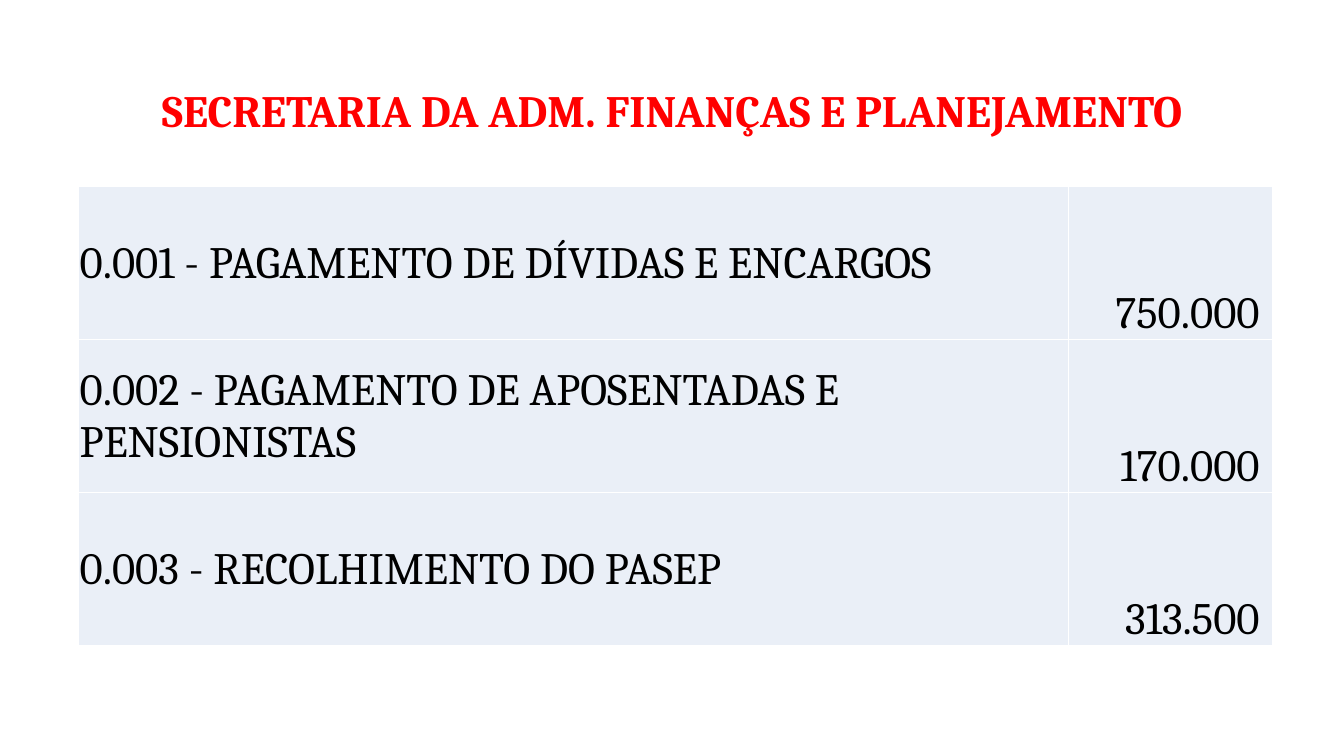
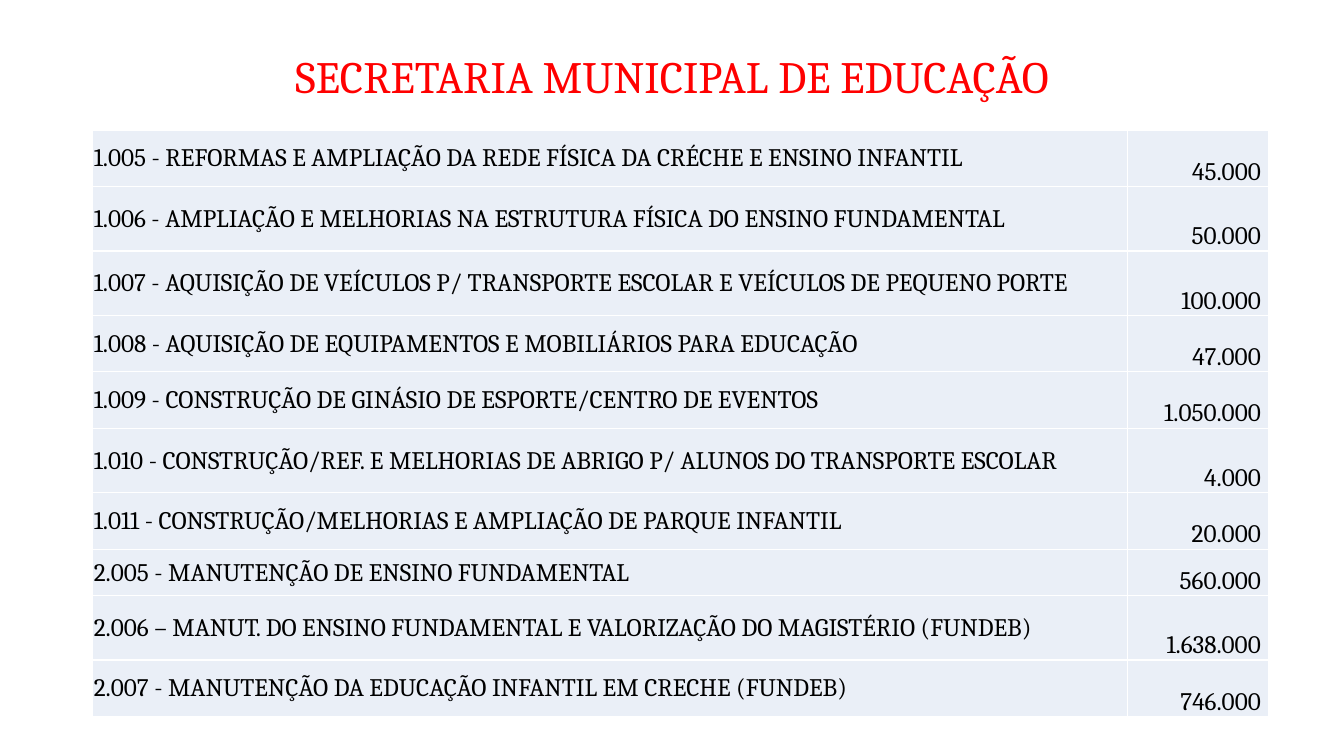
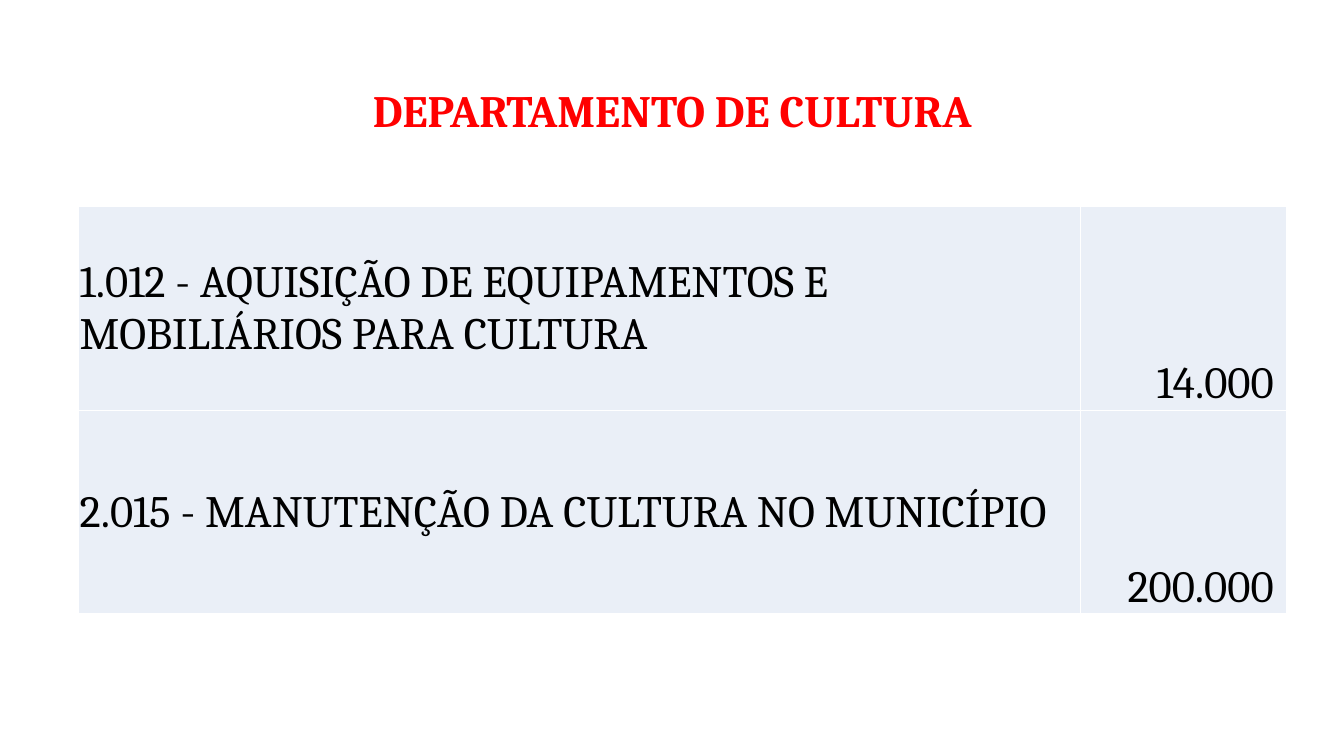
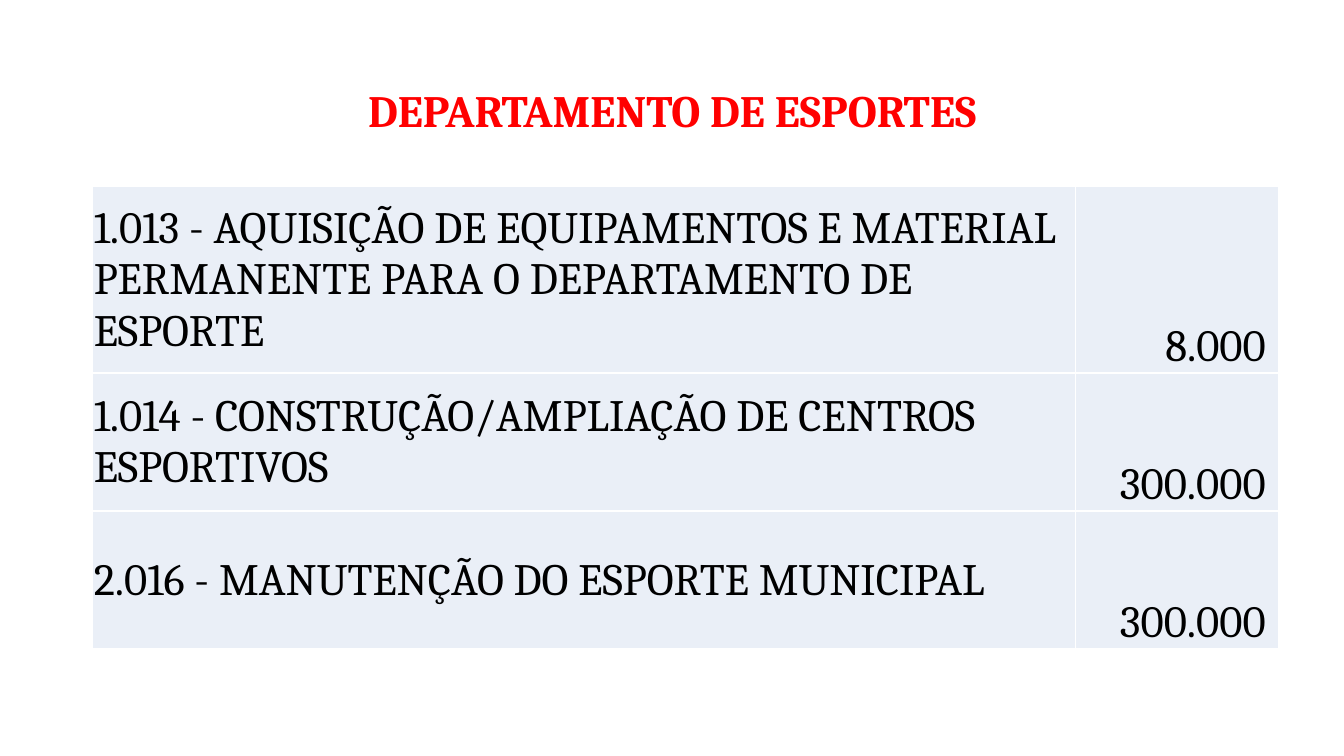
import pptx
import pptx.dml.color
import pptx.enum.text
import pptx.oxml
import pptx.oxml.ns
import pptx.util

Inches = pptx.util.Inches
Pt = pptx.util.Pt
Align = pptx.enum.text.PP_ALIGN
Anchor = pptx.enum.text.MSO_ANCHOR


def color(value):
    return pptx.dml.color.RGBColor.from_string(value)


class BudgetDeck:
    FONT = "Cambria"
    RED, BLACK, WHITE, PALE = "FF0000", "000000", "FFFFFF", "EAEFF7"
    TITLE_SIZE = 32
    INSET = 0.01
    VALUE_GAP = 0.26  # gap right of a value, as a share of the text size

    def __init__(self):
        self.deck = pptx.Presentation()
        self.deck.slide_width = Inches(13.33)
        self.deck.slide_height = Inches(7.5)
        self.page = None

    def add_page(self):
        self.page = self.deck.slides.add_slide(self.deck.slide_layouts[6])

    def add_text(self, frame, text, align, hue, **format_values):
        para = frame.paragraphs[0]
        para.alignment = align
        span = para.add_run()
        span.text = text
        span.font.color.rgb = color(hue)
        for name, value in {"name": self.FONT, **format_values}.items():
            setattr(span.font, name, value)
        return para

    def title(self, text, height, bold):
        box = self.page.shapes.add_textbox(
            Inches(0.92), Inches(0.4), Inches(11.5), Inches(height))
        frame = box.text_frame
        frame.word_wrap = True
        frame.vertical_anchor = Anchor.MIDDLE
        para = self.add_text(frame, text, Align.CENTER, self.RED,
                             size=Pt(self.TITLE_SIZE), bold=bold)
        para.line_spacing = 0.9

    def borders(self, cell):
        properties = cell._tc.get_or_add_tcPr()
        for side in ("lnL", "lnR", "lnT", "lnB"):
            properties.append(pptx.oxml.parse_xml(
                f'<a:{side} {pptx.oxml.ns.nsdecls("a")} w="{Pt(1)}"><a:solidFill>'
                f'<a:srgbClr val="{self.WHITE}"/></a:solidFill></a:{side}>'))

    def cell(self, cell, text, size, is_value):
        self.borders(cell)
        cell.fill.solid()
        cell.fill.fore_color.rgb = color(self.PALE)
        inset = Inches(self.INSET)
        gap = Pt(size * self.VALUE_GAP) if is_value else 0
        layout = {
            "margin_left": inset, "margin_top": inset,
            "margin_right": inset + gap, "margin_bottom": 0,
            "vertical_anchor": Anchor.BOTTOM if is_value else Anchor.MIDDLE,
        }
        for name, value in layout.items():
            setattr(cell, name, value)
        self.add_text(cell.text_frame, text, Align.RIGHT if is_value else Align.LEFT,
                      self.BLACK, size=Pt(size))

    def table(self, left, top, widths, heights, size, items):
        table = self.page.shapes.add_table(
            len(items), len(widths), Inches(left), Inches(top),
            Inches(sum(widths)), Inches(sum(heights))).table
        table.first_row = table.horz_banding = False
        for column, width in zip(table.columns, widths):
            column.width = Inches(width)
        for row, height, item in zip(table.rows, heights, items):
            row.height = Inches(height)
            for index, text in enumerate(item):
                self.cell(row.cells[index], text, size, is_value=index == 1)


# Content of each page: title, then the table's place, sizes and items
PAGES = [
    {
        "title": ("SECRETARIA DA ADM. FINANÇAS E PLANEJAMENTO", 1.45, True),
        "table": (0.78, 1.85, (9.82, 2.02), [1.52] * 3, 32, [
            ("0.001 - PAGAMENTO DE DÍVIDAS E ENCARGOS", "750.000"),
            ("0.002 - PAGAMENTO DE APOSENTADAS E PENSIONISTAS", "170.000"),
            ("0.003 - RECOLHIMENTO DO PASEP", "313.500"),
        ]),
    },
    {
        "title": ("SECRETARIA MUNICIPAL DE EDUCAÇÃO", 0.77, False),
        "table": (0.92, 1.29, (10.26, 1.4),
                  [0.56, 0.64, 0.64, 0.56, 0.56, 0.64, 0.56, 0.46, 0.64, 0.56], 18, [
            ("1.005 - REFORMAS E AMPLIAÇÃO DA REDE FÍSICA DA CRÉCHE E ENSINO INFANTIL", "45.000"),
            ("1.006 - AMPLIAÇÃO E MELHORIAS NA ESTRUTURA FÍSICA DO ENSINO FUNDAMENTAL", "50.000"),
            ("1.007 - AQUISIÇÃO DE VEÍCULOS P/ TRANSPORTE ESCOLAR E VEÍCULOS DE PEQUENO PORTE", "100.000"),
            ("1.008 - AQUISIÇÃO DE EQUIPAMENTOS E MOBILIÁRIOS PARA EDUCAÇÃO", "47.000"),
            ("1.009 - CONSTRUÇÃO DE GINÁSIO DE ESPORTE/CENTRO DE EVENTOS", "1.050.000"),
            ("1.010 - CONSTRUÇÃO/REF. E MELHORIAS DE ABRIGO P/ ALUNOS DO TRANSPORTE ESCOLAR", "4.000"),
            ("1.011 - CONSTRUÇÃO/MELHORIAS E AMPLIAÇÃO DE PARQUE INFANTIL", "20.000"),
            ("2.005 - MANUTENÇÃO DE ENSINO FUNDAMENTAL", "560.000"),
            ("2.006 – MANUT. DO ENSINO FUNDAMENTAL E VALORIZAÇÃO DO MAGISTÉRIO (FUNDEB)", "1.638.000"),
            ("2.007 - MANUTENÇÃO DA EDUCAÇÃO INFANTIL EM CRECHE (FUNDEB)", "746.000"),
        ]),
    },
    {
        "title": ("DEPARTAMENTO DE CULTURA", 1.45, True),
        "table": (0.78, 2.05, (9.94, 2.04), [2.02] * 2, 32, [
            ("1.012 - AQUISIÇÃO DE EQUIPAMENTOS E MOBILIÁRIOS PARA CULTURA", "14.000"),
            ("2.015 - MANUTENÇÃO DA CULTURA NO MUNICÍPIO", "200.000"),
        ]),
    },
    {
        "title": ("DEPARTAMENTO DE ESPORTES", 1.45, True),
        "table": (0.92, 1.85, (9.75, 2.01), [1.85, 1.37, 1.37], 32, [
            ("1.013 - AQUISIÇÃO DE EQUIPAMENTOS E MATERIAL PERMANENTE PARA O DEPARTAMENTO DE ESPORTE", "8.000"),
            ("1.014 - CONSTRUÇÃO/AMPLIAÇÃO DE CENTROS ESPORTIVOS", "300.000"),
            ("2.016 - MANUTENÇÃO DO ESPORTE MUNICIPAL", "300.000"),
        ]),
    },
]


def main():
    budget = BudgetDeck()
    for content in PAGES:
        budget.add_page()
        budget.title(*content["title"])
        budget.table(*content["table"])
    budget.deck.save("out.pptx")


if __name__ == "__main__":
    main()
